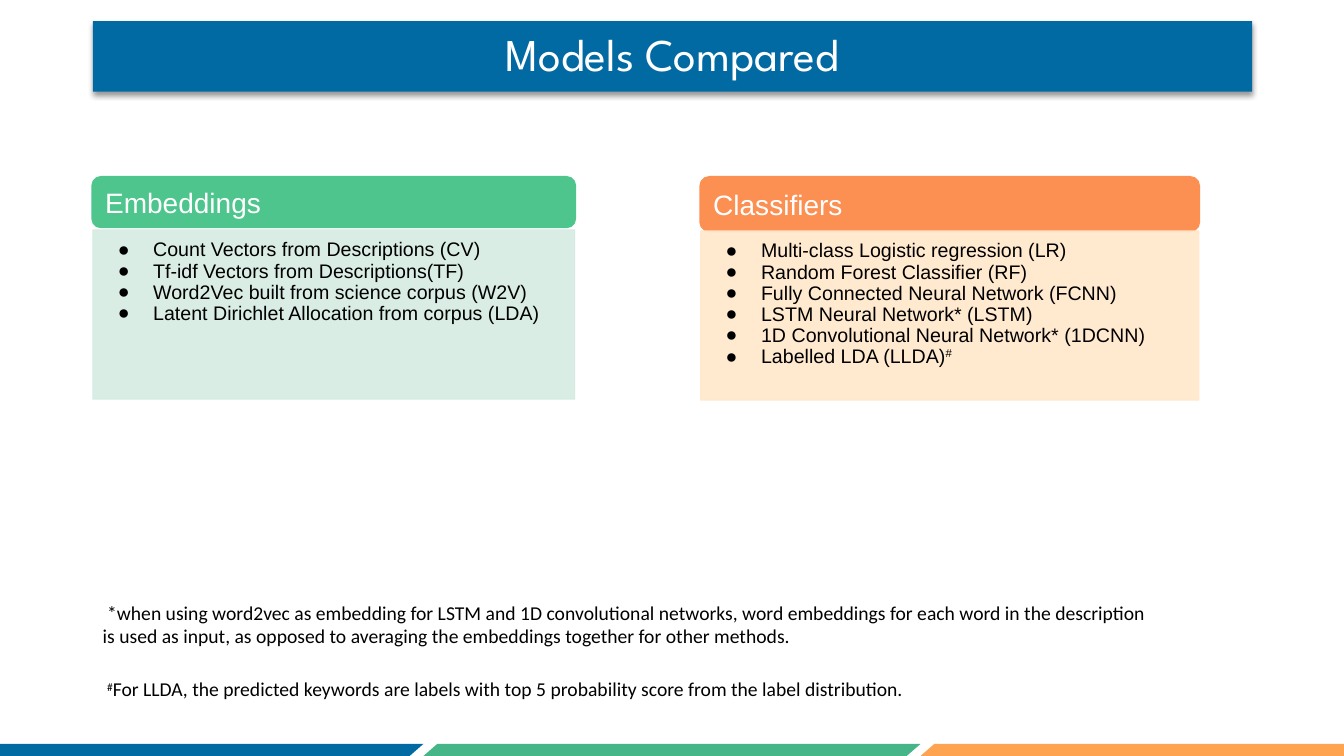
from lxml.etree import SubElement
from pptx import Presentation
from pptx.dml.color import RGBColor
from pptx.enum.shapes import MSO_SHAPE as Shape
from pptx.enum.text import MSO_ANCHOR as Anchor, PP_ALIGN as Align
from pptx.oxml.ns import qn
from pptx.util import Pt

# Content
TITLE = "Models Compared"
PANELS = [
    dict(heading="Classifiers", left=695, width=494, head_height=53, body_top=229,
         strong="FC8F52", pale="FFE8CB",
         items=["Multi-class Logistic regression (LR)",
                "Random Forest Classifier (RF)",
                "Fully Connected Neural Network (FCNN)",
                "LSTM Neural Network* (LSTM)",
                "1D Convolutional Neural Network* (1DCNN)",
                "Labelled LDA (LLDA)#"]),
    dict(heading="Embeddings", left=92, width=478, head_height=49, body_top=228,
         strong="4DC58D", pale="D5ECE3",
         items=["Count Vectors from Descriptions (CV)",
                "Tf-idf Vectors from Descriptions(TF)",
                "Word2Vec built from science corpus (W2V)",
                "Latent Dirichlet Allocation from corpus (LDA)"]),
]
FOOTNOTES = [
    (586, " *when using word2vec as embedding for LSTM and 1D convolutional networks, "
          "word embeddings for each word in the description is used as input, as opposed "
          "to averaging the embeddings together for other methods."),
    (662, " #For LLDA, the predicted keywords are labels with top 5 probability score "
          "from the label distribution."),
]
STRIPES = ["016AA3", "46B688", "FEA34F"]
STRIPE_LEFT, STRIPE_WIDTH = -73, 493
PANEL_TOP, BODY_HEIGHT = 176, 168
BLUE, WHITE, BLACK = "016AA3", "FFFFFF", "000000"
INSET = 10


def px(length):
    return length * 9144  # 100 px to the inch


def color(code):
    return RGBColor.from_string(code)


def add_block(kind, left, top, width, height, fill, line_width=0, opacity=100):
    block = slide.shapes.add_shape(kind, px(left), px(top), px(width), px(height))
    block.shadow.inherit = False
    block.fill.solid()
    block.fill.fore_color.rgb = color(fill)
    if line_width:
        block.line.color.rgb = color(fill)
        block.line.width = Pt(line_width)
    else:
        block.line.fill.background()
    if opacity < 100:
        for shade in list(block.element.spPr.iter(qn("a:srgbClr"))):
            SubElement(shade, qn("a:alpha"), val=str(opacity * 1000))
    return block


def set_frame(frame, anchor, side=INSET):
    frame.word_wrap = True
    frame.vertical_anchor = anchor
    frame.margin_left = frame.margin_right = px(side)
    frame.margin_top = frame.margin_bottom = px(INSET)


def write(paragraph, text, font, size, shade, align=Align.LEFT):
    """Fill a paragraph, raising each # to superscript."""
    paragraph.alignment = align
    before, mark, after = text.partition("#")
    for part in filter(None, (before, mark, after)):
        run = paragraph.add_run()
        run.text = part
        run.font.name, run.font.size = font, Pt(size)
        run.font.color.rgb = color(shade)
        if part == "#":
            run.font._element.set("baseline", "30000")


def add_bullet(paragraph):
    paragraph.line_spacing = 0.9
    props = paragraph._p.get_or_add_pPr()
    props.set("marL", str(px(50)))
    props.set("indent", str(px(-35)))
    SubElement(SubElement(props, qn("a:buClr")), qn("a:srgbClr"), val=BLACK)
    SubElement(props, qn("a:buFont"), typeface="Arial")
    SubElement(props, qn("a:buChar"), char="●")


deck = Presentation()
deck.slide_width, deck.slide_height = px(1333), px(750)
slide = deck.slides.add_slide(deck.slide_layouts[5])

# Stripes along the bottom
for position, shade in enumerate(STRIPES):
    stripe = add_block(Shape.PARALLELOGRAM, STRIPE_LEFT + position * STRIPE_WIDTH, 738,
                       STRIPE_WIDTH, 12, shade)
    stripe.adjustments[0] = 1.144

# Title bar with a soft shadow
title = slide.shapes.title
title.left, title.top, title.width, title.height = px(92), px(21), px(1150), px(70)
title.fill.solid()
title.fill.fore_color.rgb = color(BLUE)
title.line.fill.background()
effects = SubElement(title.element.spPr, qn("a:effectLst"))
shadow = SubElement(effects, qn("a:outerShdw"), blurRad=str(Pt(4)), dist=str(Pt(2)),
                    dir="5400000", algn="t", rotWithShape="0")
shadow_color = SubElement(shadow, qn("a:srgbClr"), val=BLACK)
SubElement(shadow_color, qn("a:alpha"), val="40000")
set_frame(title.text_frame, Anchor.MIDDLE, side=0)
title_line = title.text_frame.paragraphs[0]
title_line.line_spacing = 0.9
write(title_line, TITLE, "League Spartan", 32.4, WHITE, Align.CENTER)

# Panels: rounded heading over a pale list
for panel in PANELS:
    left, width = panel["left"], panel["width"]
    heading = add_block(Shape.ROUNDED_RECTANGLE, left, PANEL_TOP, width,
                        panel["head_height"], panel["strong"], 2)
    set_frame(heading.text_frame, Anchor.MIDDLE)
    write(heading.text_frame.paragraphs[0], panel["heading"], "Arial", 20, WHITE)

    body = add_block(Shape.RECTANGLE, left, panel["body_top"], width, BODY_HEIGHT,
                     panel["pale"], 0.75, opacity=90)
    set_frame(body.text_frame, Anchor.TOP)
    for number, item in enumerate(panel["items"]):
        frame = body.text_frame
        entry = frame.add_paragraph() if number else frame.paragraphs[0]
        write(entry, item, "Arial", 14, BLACK)
        add_bullet(entry)

# Footnotes
for top, note in FOOTNOTES:
    footnote = slide.shapes.add_textbox(px(92), px(top), px(1058), px(70))
    set_frame(footnote.text_frame, Anchor.TOP)
    write(footnote.text_frame.paragraphs[0], note, "Calibri", 14, BLACK)

deck.save("out.pptx")
